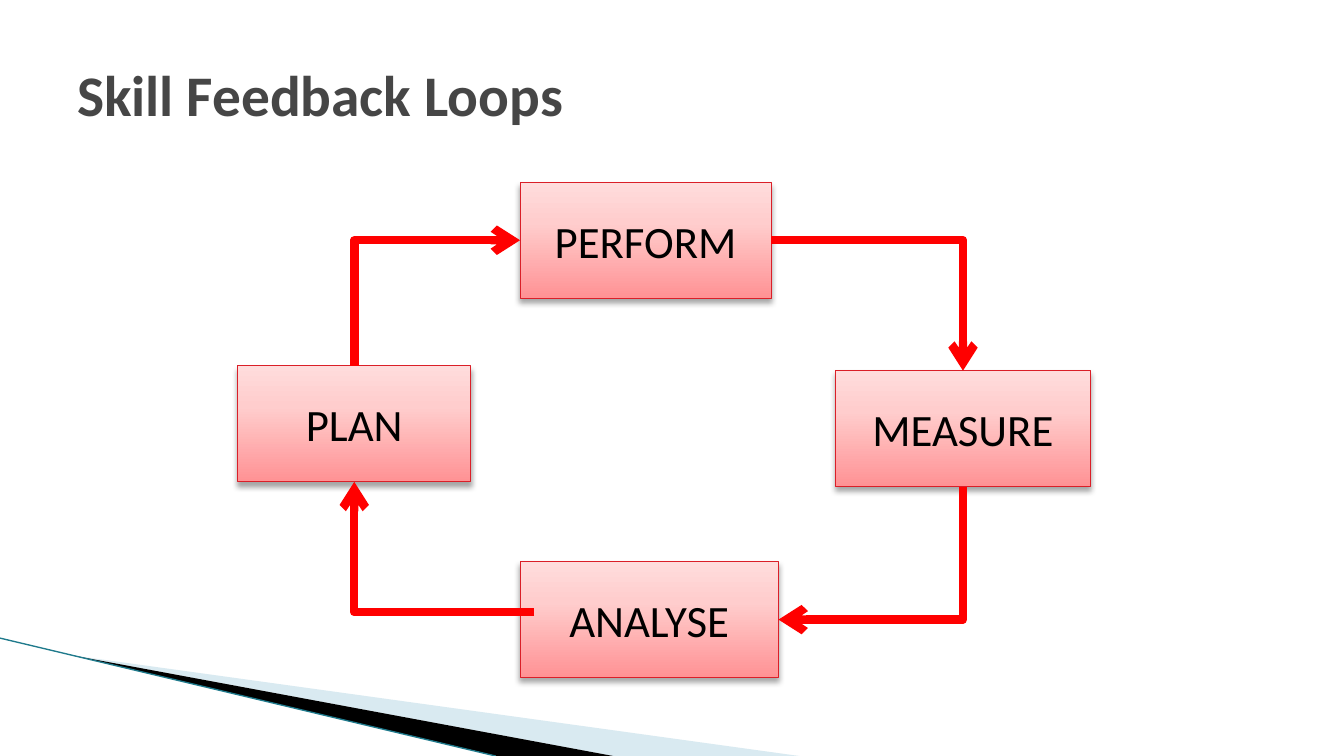
from lxml.etree import SubElement
from pptx import Presentation
from pptx.dml.color import RGBColor
from pptx.enum.shapes import MSO_CONNECTOR as Connector, MSO_SHAPE as Shape
from pptx.enum.text import MSO_ANCHOR as Anchor, PP_ALIGN as Align
from pptx.oxml import parse_xml
from pptx.oxml.ns import nsdecls, qn
from pptx.util import Pt

FONT = "Calibri"
TITLE_GREY = RGBColor(0x46, 0x46, 0x46)
BLACK = RGBColor(0, 0, 0)
ARROW_RED = RGBColor(0xFF, 0, 0)
BORDER_RED = RGBColor(0xDA, 0x1F, 0x28)
PALE_BLUE = RGBColor(0xA0, 0xCB, 0xDC)
TEAL = RGBColor(0x1F, 0x7A, 0x8C)
STEP_STOPS = [
    (0, RGBColor(0xFF, 0x92, 0x94)),
    (65, RGBColor(0xFF, 0xCD, 0xCD)),
    (100, RGBColor(0xFF, 0xDC, 0xDC)),
]
TOP, LEFT, BOTTOM, RIGHT = range(4)
STEP_HEIGHT = 82.8
STEPS = {
    "PERFORM": (371.5, 130.2, 179.4),
    "PLAN": (169.8, 261.4, 166.6),
    "ANALYSE": (371.5, 401.2, 184.6),
    "MEASURE": (596.7, 264.8, 182.3),
}


def write_text(shape, text, size, color, align, bold=False):
    """Fill a shape with one vertically centred line of text."""
    frame = shape.text_frame
    frame.word_wrap = True
    frame.vertical_anchor = Anchor.MIDDLE
    para = frame.paragraphs[0]
    para.text = text
    para.alignment = align
    para.font.name = FONT
    para.font.size = Pt(size)
    para.font.bold = bold
    para.font.color.rgb = color


def add_title(page, text, left, top, width, height):
    """Place the slide title."""
    box = page.shapes.add_textbox(Pt(left), Pt(top), Pt(width), Pt(height))
    write_text(box, text, 41, TITLE_GREY, Align.LEFT, bold=True)


def add_wedge(page, points, color, opacity=100):
    """Draw a filled outline with no border."""
    corners = [(Pt(x), Pt(y)) for x, y in points]
    builder = page.shapes.build_freeform(*corners[0])
    builder.add_line_segments(corners[1:])
    wedge = builder.convert_to_shape()
    wedge.shadow.inherit = False
    wedge.line.fill.background()
    wedge.fill.solid()
    wedge.fill.fore_color.rgb = color
    if opacity < 100:
        tint = next(wedge._element.spPr.iter(qn("a:srgbClr")))
        SubElement(tint, qn("a:alpha"), val=str(opacity * 1000))


def add_line(page, kind, begin, end, color, width):
    """Draw a connector without a shadow."""
    line = page.shapes.add_connector(kind, *map(Pt, begin + end))
    line.line.color.rgb = color
    line.line.width = Pt(width)
    SubElement(line._element.spPr, qn("a:effectLst"))
    return line


def add_corner_swoosh(page, left, top, bottom):
    """Draw the wedges and thin line in the bottom left corner."""
    tip = (left + 52, top + 12.4)
    add_wedge(page, [tip, (left + 571, bottom), (left + 437.8, bottom)], PALE_BLUE, 40)
    add_wedge(page, [tip, (left + 438, bottom), (left + 355, bottom)], BLACK)
    add_line(page, Connector.STRAIGHT, (left, top), (left + 354, bottom), TEAL, 0.95)


def add_step(page, label, left, top, width):
    """Draw one shaded step box with its label."""
    step = page.shapes.add_shape(
        Shape.RECTANGLE, Pt(left), Pt(top), Pt(width), Pt(STEP_HEIGHT))
    step.fill.gradient()
    step.fill.gradient_angle = 90
    stops = next(step._element.spPr.iter(qn("a:gsLst")))
    for stop in list(stops):
        stops.remove(stop)
    for position, color in STEP_STOPS:
        stop = SubElement(stops, qn("a:gs"), pos=str(position * 1000))
        SubElement(stop, qn("a:srgbClr"), val=str(color))
    step.line.color.rgb = BORDER_RED
    step.line.width = Pt(0.75)
    step._element.spPr.append(parse_xml(
        f'<a:effectLst {nsdecls("a")}>'
        f'<a:outerShdw blurRad="{Pt(4)}" dist="{Pt(3)}" dir="5400000" rotWithShape="0">'
        '<a:srgbClr val="000000"><a:alpha val="35000"/></a:srgbClr>'
        '</a:outerShdw></a:effectLst>'))
    write_text(step, label, 32, BLACK, Align.CENTER)


def add_elbow(page, begin, end, arrow_end):
    """Draw a one-corner arrow that leaves its begin point sideways."""
    elbow = add_line(page, Connector.ELBOW, begin, end, ARROW_RED, 6)
    elbow._element.spPr.find(qn("a:prstGeom")).set("prst", "bentConnector2")
    SubElement(elbow.line._get_or_add_ln(), qn(f"a:{arrow_end}"), type="arrow")


def side_middle(label, side):
    """Return the middle of one side of a step box."""
    left, top, width = STEPS[label]
    return {
        TOP: (left + width / 2, top),
        LEFT: (left, top + STEP_HEIGHT / 2),
        BOTTOM: (left + width / 2, top + STEP_HEIGHT),
        RIGHT: (left + width, top + STEP_HEIGHT / 2),
    }[side]


def add_loop(page):
    """Draw the four steps and the arrows between them."""
    for label, place in STEPS.items():
        add_step(page, label, *place)
    analyse_left, analyse_middle = side_middle("ANALYSE", LEFT)
    add_elbow(page, (analyse_left + 10, analyse_middle - 5.4),
              side_middle("PLAN", BOTTOM), "tailEnd")
    for beside, side, stacked, edge, arrow_end in [
        ("PERFORM", LEFT, "PLAN", TOP, "headEnd"),
        ("PERFORM", RIGHT, "MEASURE", TOP, "tailEnd"),
        ("ANALYSE", RIGHT, "MEASURE", BOTTOM, "headEnd"),
    ]:
        add_elbow(page, side_middle(beside, side), side_middle(stacked, edge), arrow_end)


def main():
    """Build and save the deck."""
    deck = Presentation()
    deck.slide_width, deck.slide_height = Pt(960), Pt(540)
    page = deck.slides.add_slide(deck.slide_layouts[6])
    add_corner_swoosh(page, 0, 455.8, 540)
    add_title(page, "Skill Feedback Loops", 48, 21.6, 864, 90)
    add_loop(page)
    deck.save("out.pptx")


if __name__ == "__main__":
    main()
